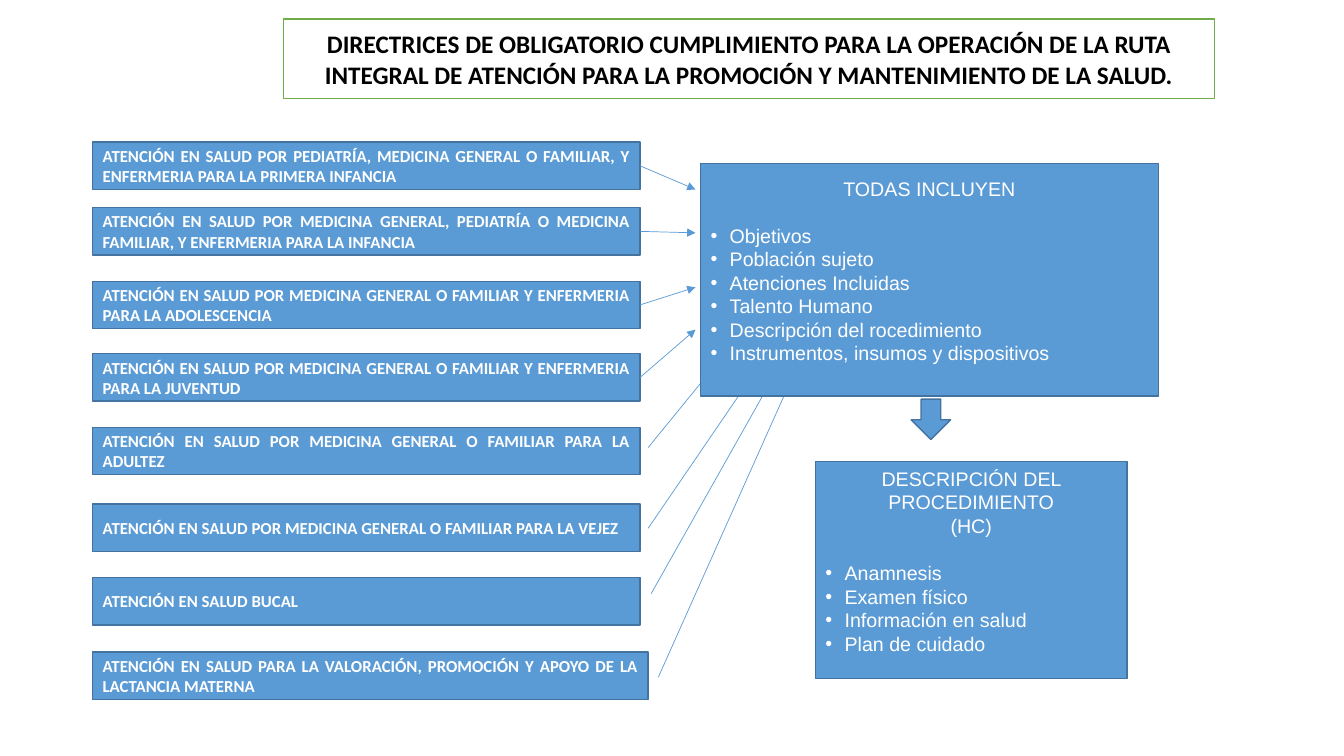
import pptx
import pptx.dml.color
import pptx.enum.shapes
import pptx.enum.text
import pptx.oxml.ns
import pptx.util
import lxml.etree

Pt = pptx.util.Pt
Kind = pptx.enum.shapes.MSO_SHAPE
Side = pptx.enum.text.PP_ALIGN
tag = pptx.oxml.ns.qn
tint = pptx.dml.color.RGBColor.from_string

theme = {
    "blue": tint("5B9BD5"), "edge": tint("43739E"), "green": tint("70AD47"),
    "white": tint("FFFFFF"), "black": tint("000000"),
    "title": {"name": "Calibri", "size": Pt(18), "bold": True},
    "care": {"name": "Calibri", "size": Pt(12), "bold": True},
    "list": {"name": "Arial", "size": Pt(14), "bold": False},
    "pitch": Pt(16.8), "indent": pptx.util.Inches(0.19),
}

deck = pptx.Presentation()
deck.slide_width = pptx.util.Inches(13.33)
deck.slide_height = pptx.util.Inches(7.5)
slide = deck.slides.add_slide(deck.slide_layouts[6])
shapes = slide.shapes


def place(x, y):
    return int(deck.slide_width * x / 100), int(deck.slide_height * y / 100)


def block(spot, lines=(), font="list", fill="blue", edge="edge", ink="white", kind=Kind.RECTANGLE):
    shape = shapes.add_shape(kind, *place(*spot[:2]), *place(*spot[2:]))
    shape.shadow.inherit = False
    shape.fill.solid()
    shape.fill.fore_color.rgb = theme[fill]
    shape.line.color.rgb = theme[edge]
    shape.line.width = Pt(1)
    frame = shape.text_frame
    frame.word_wrap = True
    frame.vertical_anchor = pptx.enum.text.MSO_ANCHOR.MIDDLE
    for n, (text, form) in enumerate(lines):
        para = frame.paragraphs[0] if n == 0 else frame.add_paragraph()
        form = dict(form)
        if form.pop("bullet", False):
            props = para._p.get_or_add_pPr()
            props.set("marL", str(theme["indent"]))
            props.set("indent", str(-theme["indent"]))
            lxml.etree.SubElement(props, tag("a:buFont")).set("typeface", "Arial")
            lxml.etree.SubElement(props, tag("a:buChar")).set("char", "•")
        for key, value in form.items():
            setattr(para, key, value)
        run = para.add_run()
        run.text = text
        for key, value in theme[font].items():
            setattr(run.font, key, value)
        run.font.color.rgb = theme[ink]
    return shape


mid = {"alignment": Side.CENTER}
full = {"alignment": Side.JUSTIFY}

title = ("DIRECTRICES DE OBLIGATORIO CUMPLIMIENTO PARA LA OPERACIÓN DE LA RUTA "
         "INTEGRAL DE ATENCIÓN PARA LA PROMOCIÓN Y MANTENIMIENTO DE LA SALUD.")
block((21.08, 2.53, 69.3, 10.53), [(title, mid)], "title", "white", "green", "black")

left, wide, high = 6.9, 40.72, 6.27
cares = [
    (18.8, "POR PEDIATRÍA, MEDICINA GENERAL O FAMILIAR, Y ENFERMERIA PARA LA PRIMERA INFANCIA",
     None, (51.75, 25.07)),
    (27.47, "POR MEDICINA GENERAL, PEDIATRÍA O MEDICINA FAMILIAR, Y ENFERMERIA PARA LA INFANCIA",
     None, (51.75, 30.8)),
    (37.2, "POR MEDICINA GENERAL O FAMILIAR Y ENFERMERIA PARA LA ADOLESCENCIA",
     None, (51.75, 38)),
    (46.8, "POR MEDICINA GENERAL O FAMILIAR Y ENFERMERIA PARA LA JUVENTUD",
     None, (51.75, 43.6)),
    (56.53, "POR MEDICINA GENERAL O FAMILIAR PARA LA ADULTEZ",
     (48.23, 59.2), (53.55, 47.6)),
    (66.67, "POR MEDICINA GENERAL O FAMILIAR PARA LA VEJEZ",
     (48.23, 69.87), (56.48, 48.4)),
    (76.4, "BUCAL", (48.45, 78.53), (57.83, 48.93)),
    (86.27, "PARA LA VALORACIÓN, PROMOCIÓN Y APOYO DE LA LACTANCIA MATERNA",
     (48.98, 89.6), (59.33, 48.4)),
]
for top, text, start, goal in cares:
    extra = 0.6 if top == cares[-1][0] else 0
    care = block((left, top, wide + extra, high), [("ATENCIÓN EN SALUD " + text, full)], "care")
    begin = start or (left + wide, top + high / 2)
    arrow = shapes.add_connector(pptx.enum.shapes.MSO_CONNECTOR.STRAIGHT, *place(*begin), *place(*goal))
    if start is None:
        arrow.begin_connect(care, 3)
    arrow.line.color.rgb = theme["blue"]
    arrow.line.width = Pt(0.5)
    lxml.etree.SubElement(arrow.line._get_or_add_ln(), tag("a:tailEnd")).set("type", "triangle")
    lxml.etree.SubElement(arrow._element.spPr, tag("a:effectLst"))

panels = [
    ((52.13, 21.6, 34.05, 30.8), ["TODAS INCLUYEN"],
     ["Objetivos", "Población sujeto", "Atenciones Incluidas", "Talento Humano",
      "Descripción del rocedimiento", "Instrumentos, insumos y dispositivos"]),
    ((60.68, 61.07, 23.18, 28.67), ["DESCRIPCIÓN DEL PROCEDIMIENTO", "(HC)"],
     ["Anamnesis", "Examen físico", "Información en salud", "Plan de cuidado"]),
]
for spot, heads, items in panels:
    lines = [(head, {**mid, "line_spacing": theme["pitch"]}) for head in heads]
    for n, item in enumerate(items):
        gap = theme["pitch"] if n == 0 else Pt(0)
        lines.append((item, {**full, "bullet": True, "line_spacing": theme["pitch"], "space_before": gap}))
    panel = block(spot, lines)
    panel.text_frame.margin_bottom = pptx.util.Inches(0.23)

block((67.8, 52.8, 2.93, 5.33), kind=Kind.DOWN_ARROW)

deck.save("out.pptx")
